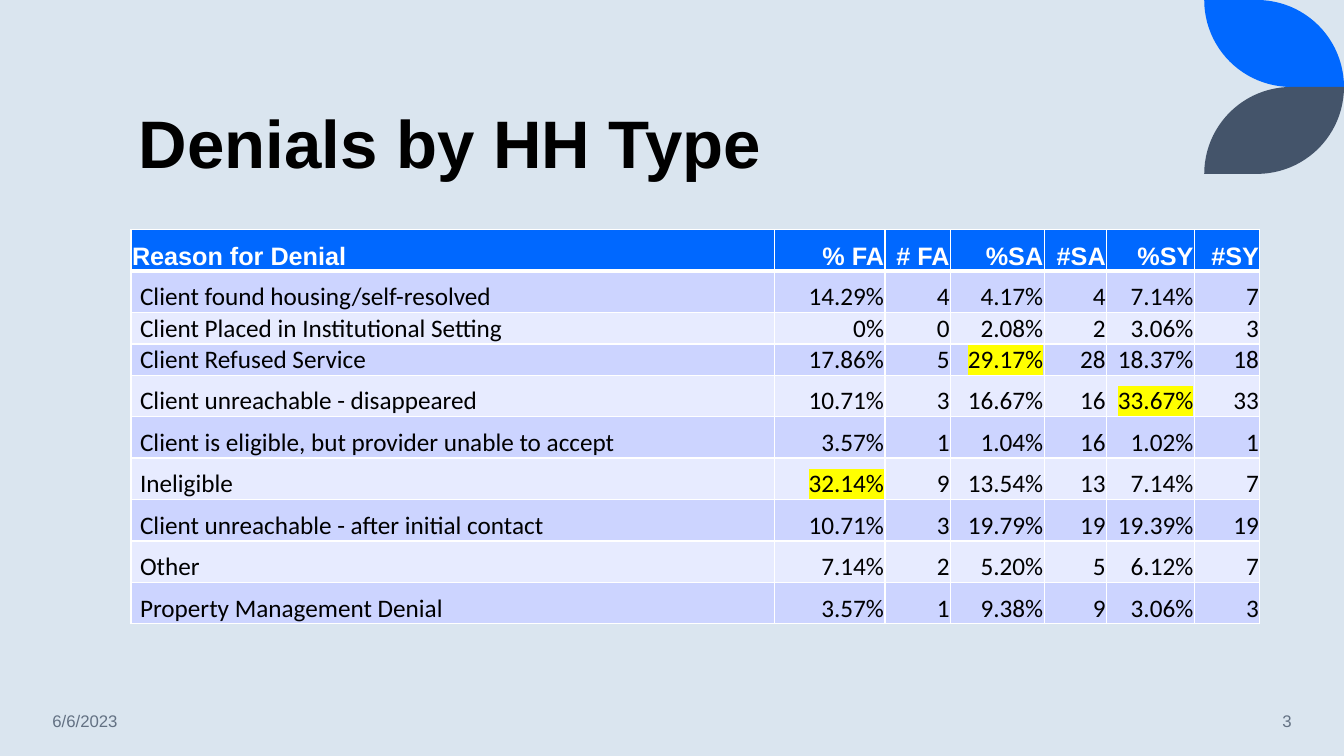
from math import cos, pi, sin

from lxml.etree import SubElement
from pptx import Presentation
from pptx.dml.color import RGBColor
from pptx.enum.text import MSO_ANCHOR, PP_ALIGN
from pptx.oxml.ns import qn
from pptx.util import Inches, Pt

WIDE, HIGH = Inches(13.33), Inches(7.5)
HUES = {
    "back": "DAE5EF", "blue": "0068FF", "slate": "44546A", "black": "000000",
    "white": "FFFFFF", "gray": "637183", "odd": "CCD4FF", "even": "E7EBFF",
    "mark": "FFFF00",
}
HEAD = {"size": Pt(18), "name": "Arial", "bold": True}
BODY = {"size": Pt(18), "name": "Calibri", "bold": False}
TITLE = {"size": Pt(48), "name": "Arial", "bold": True}
FOOT = {"size": Pt(12), "name": "Arial", "bold": False}
COLS = [6.38, 1.1, 0.65, 0.93, 0.62, 0.87, 0.65]
ROWS = [2, 2, 1, 1, 2, 2, 2, 2, 2, 2]
DATA = [
    ["Reason for Denial", "% FA", "# FA", "%SA", "#SA", "%SY", "#SY"],
    ["Client found housing/self-resolved", "14.29%", "4", "4.17%", "4", "7.14%", "7"],
    ["Client Placed in Institutional Setting", "0%", "0", "2.08%", "2", "3.06%", "3"],
    ["Client Refused Service", "17.86%", "5", "29.17%", "28", "18.37%", "18"],
    ["Client unreachable - disappeared", "10.71%", "3", "16.67%", "16", "33.67%", "33"],
    ["Client is eligible, but provider unable to accept", "3.57%", "1", "1.04%", "16", "1.02%", "1"],
    ["Ineligible", "32.14%", "9", "13.54%", "13", "7.14%", "7"],
    ["Client unreachable - after initial contact", "10.71%", "3", "19.79%", "19", "19.39%", "19"],
    ["Other", "7.14%", "2", "5.20%", "5", "6.12%", "7"],
    ["Property Management Denial", "3.57%", "1", "9.38%", "9", "3.06%", "3"],
]
PEAKS = {"29.17%", "33.67%", "32.14%"}


def area(x, y, w, h):
    """Turn percentages of the slide into a box of lengths."""
    return [round(part * full / 100)
            for part, full in zip((x, y, w, h), (WIDE, HIGH) * 2)]


def rgb(hue):
    """Look up a named colour."""
    return RGBColor.from_string(HUES[hue])


def apply(item, form):
    """Set each attribute of the item from a dict."""
    for key, value in form.items():
        setattr(item, key, value)


def write(para, text, form, hue, align):
    """Put one formatted run into a paragraph."""
    para.alignment = align
    run = para.add_run()
    run.text = text
    apply(run.font, form)
    run.font.color.rgb = rgb(hue)
    return run


def mark(run):
    """Highlight a run."""
    fill = run._r.get_or_add_rPr().find(qn("a:solidFill"))
    light = fill.makeelement(qn("a:highlight"), {})
    SubElement(light, qn("a:srgbClr"), val=HUES["mark"])
    fill.addnext(light)


def label(slide, box, text, form, hue, anchor, align=PP_ALIGN.LEFT):
    """Place a line of text in the box."""
    frame = slide.shapes.add_textbox(*box).text_frame
    apply(frame, {"word_wrap": True, "vertical_anchor": anchor})
    write(frame.paragraphs[0], text, form, hue, align)
    return frame.paragraphs[0]


def leaf(slide, box, hue, flip):
    """Draw a leaf of two quarter arcs, as tall as their radius."""
    x, y, w, h = box
    turns = [step * pi / 48 for step in range(25)]
    dots = [(x, 0)]
    dots += [(x + w - h + h * sin(t), h - h * cos(t)) for t in turns]
    dots += [(x + h - h * sin(t), h * cos(t)) for t in turns]
    dots = [(round(a), round(y + (h - b if flip else b))) for a, b in dots]
    path = slide.shapes.build_freeform(*dots[0], scale=1.0)
    path.add_line_segments(dots[1:], close=True)
    shape = path.convert_to_shape()
    shape.shadow.inherit = False
    shape.fill.solid()
    shape.fill.fore_color.rgb = rgb(hue)
    shape.line.fill.background()


def edge(cell, row):
    """Rule the cell in white, with a thick line under the header."""
    props = cell._tc.get_or_add_tcPr()
    thick = {"lnB": row == 0, "lnT": row == 1}
    for side in ("lnL", "lnR", "lnT", "lnB"):
        width = Pt(3 if thick.get(side) else 1)
        line = SubElement(props, qn(f"a:{side}"), w=str(width))
        fill = SubElement(line, qn("a:solidFill"))
        SubElement(fill, qn("a:srgbClr"), val=HUES["white"])


def grid(slide, box):
    """Fill the box with the table of denials."""
    table = slide.shapes.add_table(len(DATA), len(COLS), *box).table
    for col, part in zip(table.columns, COLS):
        col.width = round(box[2] * part / sum(COLS))
    for row, part in zip(table.rows, ROWS):
        row.height = round(box[3] * part / sum(ROWS))
    for r, line in enumerate(DATA):
        back = "blue" if r == 0 else "odd" if r % 2 else "even"
        form, hue = (BODY, "black") if r else (HEAD, "white")
        for c, text in enumerate(line):
            cell = table.cell(r, c)
            left = Inches(0.09 if r and c == 0 else 0.01)
            apply(cell, {"margin_left": left, "margin_right": Inches(0.01),
                         "margin_top": Inches(0.01), "margin_bottom": 0,
                         "vertical_anchor": MSO_ANCHOR.BOTTOM})
            edge(cell, r)
            cell.fill.solid()
            cell.fill.fore_color.rgb = rgb(back)
            align = PP_ALIGN.RIGHT if c else PP_ALIGN.LEFT
            run = write(cell.text_frame.paragraphs[0], text, form, hue, align)
            if text in PEAKS:
                mark(run)


def main():
    """Build the slide and save it."""
    deck = Presentation()
    apply(deck, {"slide_width": WIDE, "slide_height": HIGH})
    slide = deck.slides.add_slide(deck.slide_layouts[6])
    slide.background.fill.solid()
    slide.background.fill.fore_color.rgb = rgb("back")
    for i, hue in enumerate(("blue", "slate")):
        leaf(slide, area(89.6, 11.5 * i, 10.4, 11.5), hue, i == 1)
    title = label(slide, area(9.6, 5.6, 80.2, 19.33), "Denials by HH Type",
                  TITLE, "black", MSO_ANCHOR.BOTTOM)
    title.line_spacing = 0.9
    label(slide, area(3.15, 92.67, 13.95, 5.33), "6/6/2023",
          FOOT, "gray", MSO_ANCHOR.MIDDLE)
    label(slide, area(83.27, 92.67, 13.58, 5.33), "3",
          FOOT, "gray", MSO_ANCHOR.MIDDLE, PP_ALIGN.RIGHT)
    grid(slide, area(9.75, 30.4, 84, 49.33))
    deck.save("out.pptx")


if __name__ == "__main__":
    main()
